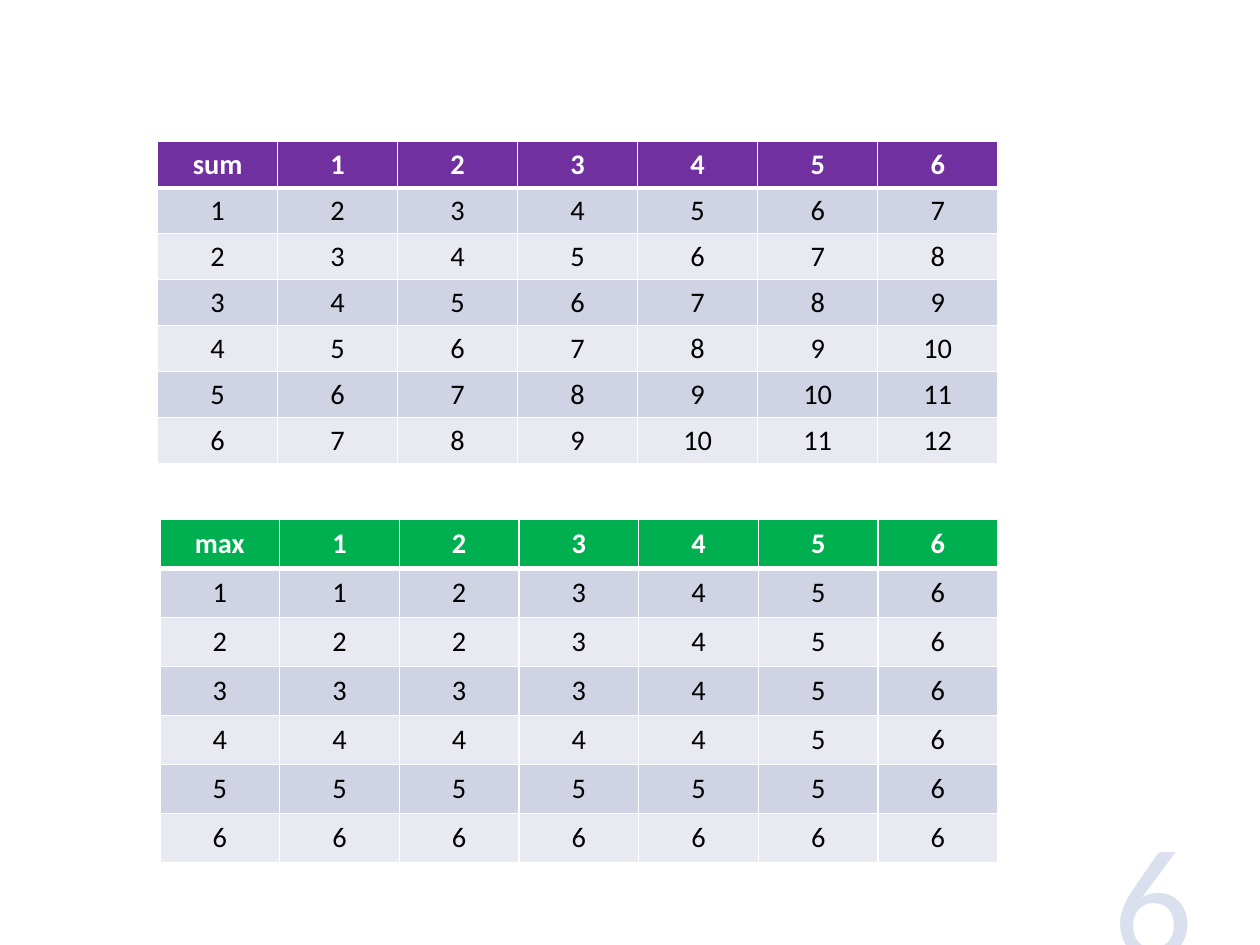
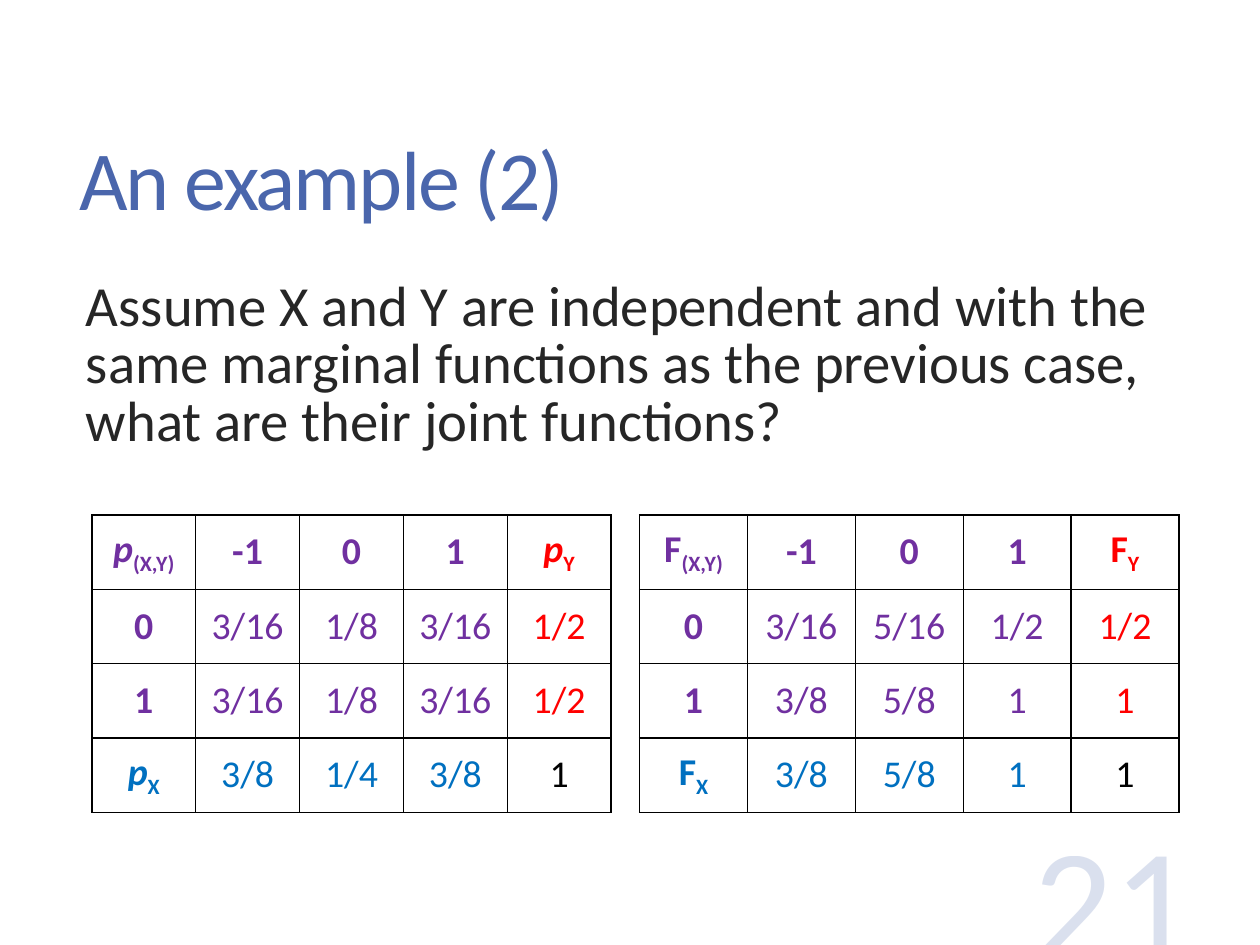
from lxml import etree
from pptx import Presentation
from pptx.dml.color import RGBColor
from pptx.enum import text
from pptx.oxml import ns
from pptx.util import Pt

# Content
DICE = range(1, 7)
DICE_TABLES = [  # label, rule, header colour, left, top, column width, row height
    ("max", max, "green", 101.5, 329.8, 76, 31.15),
    ("sum", sum, "purple", 100.1, 90, 76.2, 29.2),
]
TITLE = "An example (2)"
QUESTION = ("Assume X and Y are independent and with the same marginal functions "
            "as the previous case, what are their joint functions?")
JOINT_TABLES = [  # symbol, left, column width, inner rows, last row
    ("p", 58.3, 65.95,
     [["0", "3/16", "1/8", "3/16", "1/2"], ["1", "3/16", "1/8", "3/16", "1/2"]],
     ["3/8", "1/4", "3/8", "1"]),
    ("F", 406.1, 68.5,
     [["0", "3/16", "5/16", "1/2", "1/2"], ["1", "3/8", "5/8", "1", "1"]],
     ["3/8", "5/8", "1", "1"]),
]
JOINT_TOP, JOINT_ROW = 326.9, 47.2

# Shared look
FONT = "Calibri"
COLORS = {"accent": "4A66AC", "body": "262626", "white": "FFFFFF", "black": "000000",
          "purple": "7030A0", "green": "00B050", "red": "FF0000", "blue": "0070C0",
          "band_dark": "D0D3E3", "band_light": "E9EAF1"}


def style(paragraph, size, color, bold=False):
    font = paragraph.font
    font.name, font.size, font.bold = FONT, Pt(size), bold
    font.color.rgb = RGBColor.from_string(COLORS[color])


def paragraph_properties(paragraph):
    return paragraph._p.get_or_add_pPr()


def add_text(slide, box, content, size, color, anchor):
    frame = slide.shapes.add_textbox(*map(Pt, box)).text_frame
    frame.word_wrap = True
    frame.vertical_anchor = anchor
    paragraph = frame.paragraphs[0]
    paragraph.text = content
    style(paragraph, size, color)
    return paragraph


def add_page_number(slide, number):
    paragraph = add_text(slide, (572.4, 509.8, 192.2, 122.4), number, 100, "accent",
                         text.MSO_ANCHOR.BOTTOM)
    paragraph.alignment = text.PP_ALIGN.RIGHT
    color = paragraph_properties(paragraph).find(".//" + ns.qn("a:srgbClr"))
    etree.SubElement(color, ns.qn("a:alpha")).set("val", "20000")


def set_borders(cell, color, widths):
    properties = cell._tc.get_or_add_tcPr()
    for index, (side, width) in enumerate(zip("LRTB", widths)):
        line = etree.Element(ns.qn(f"a:ln{side}"), w=str(Pt(width)))
        fill = etree.SubElement(line, ns.qn("a:solidFill"))
        etree.SubElement(fill, ns.qn("a:srgbClr"), val=COLORS[color])
        properties.insert(index, line)


def fill_cell(cell, content, size, color, bold):
    """Content is a string, or a pair of symbol and subscript."""
    cell.vertical_anchor = text.MSO_ANCHOR.MIDDLE
    paragraph = cell.text_frame.paragraphs[0]
    paragraph.alignment = text.PP_ALIGN.CENTER
    style(paragraph, size, color, bold)
    if isinstance(content, str):
        paragraph.add_run().text = content
        return
    symbol, subscript = (paragraph.add_run() for _ in content)
    symbol.text, subscript.text = content
    symbol.font.italic = content[0] == "p"
    subscript.font._element.set("baseline", "-25000")


def add_grid(slide, rows, left, top, column_width, row_height, size, look):
    """look(row, column) gives text colour, bold, fill, border colour and widths."""
    count, columns = len(rows), len(rows[0])
    table = slide.shapes.add_table(count, columns, Pt(left), Pt(top),
                                   Pt(column_width * columns), Pt(row_height * count)).table
    table.horz_banding = False
    for column in table.columns:
        column.width = Pt(column_width)
    for r, row in enumerate(rows):
        table.rows[r].height = Pt(row_height)
        for c, content in enumerate(row):
            color, bold, fill, border, widths = look(r, c)
            cell = table.cell(r, c)
            fill_cell(cell, content, size, color, bold)
            if fill:
                cell.fill.solid()
                cell.fill.fore_color.rgb = RGBColor.from_string(COLORS[fill])
            else:
                cell.fill.background()
            set_borders(cell, border, widths)


def dice_look(header):
    def look(row, column):
        if row == 0:
            return "white", True, header, "white", (1, 1, 1, 3)
        band = "band_dark" if row % 2 else "band_light"
        return "black", False, band, "white", (1, 1, 3 if row == 1 else 1, 1)
    return look


def joint_look(row, column):
    last_row, last_column = row == 3, column == 4
    color = ("black" if last_row and last_column else
             "blue" if last_row else "red" if last_column else "purple")
    return color, row == 0 or column == 0, None, "black", (1, 1, 1, 1)


def build_dice_slide(slide):
    add_page_number(slide, "6")
    for label, rule, header, *place in DICE_TABLES:
        rows = [[label, *map(str, DICE)]]
        rows += [[str(y), *(str(rule((x, y))) for x in DICE)] for y in DICE]
        add_grid(slide, rows, *place, 18, dice_look(header))


def build_example_slide(slide):
    title = add_text(slide, (43.2, 43.9, 707, 144.7), TITLE, 53.3, "accent",
                     text.MSO_ANCHOR.MIDDLE)
    title.line_spacing = 0.9
    paragraph_properties(title).find(ns.qn("a:defRPr")).set("spc", "-130")

    question = add_text(slide, (44.6, 174.2, 705.6, 125.3), QUESTION, 36, "body",
                        text.MSO_ANCHOR.TOP)
    question.line_spacing = 0.85
    question.space_before = Pt(14.4)
    paragraph_properties(question).set("marL", str(Pt(2.9)))

    add_page_number(slide, "21")
    for symbol, left, width, inner, last in JOINT_TABLES:
        rows = [[(symbol, "(X,Y)"), "-1", "0", "1", (symbol, "Y")],
                *inner, [(symbol, "X"), *last]]
        add_grid(slide, rows, left, JOINT_TOP, width, JOINT_ROW, 24, joint_look)


def main():
    presentation = Presentation()
    presentation.slide_width, presentation.slide_height = Pt(800), Pt(600)
    for build in (build_dice_slide, build_example_slide):
        build(presentation.slides.add_slide(presentation.slide_layouts[6]))
    presentation.save("out.pptx")


if __name__ == "__main__":
    main()
